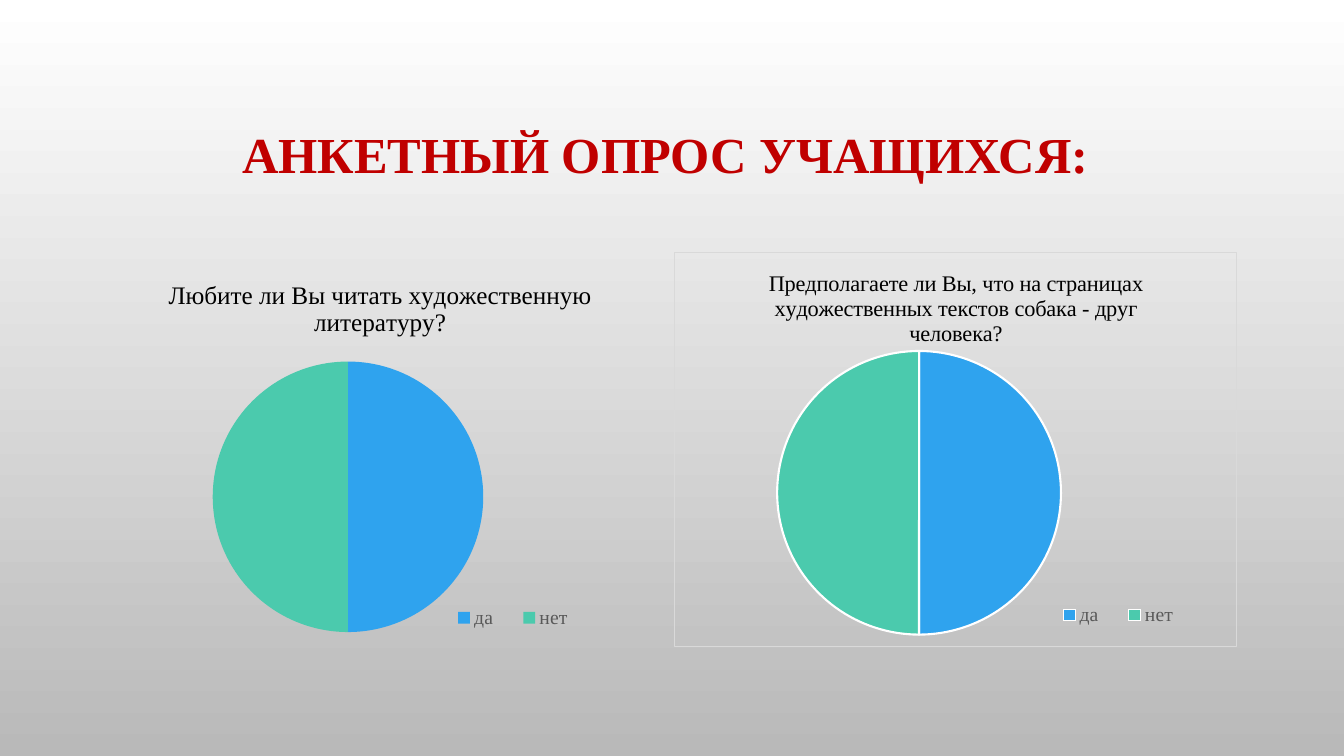
from dataclasses import dataclass

from lxml import etree
from pptx import Presentation
from pptx import util as u
from pptx.chart.chart import Chart
from pptx.chart.data import CategoryChartData
from pptx.dml.color import RGBColor
from pptx.enum import chart as kinds
from pptx.enum import text
from pptx.oxml import parse_xml
from pptx.oxml.ns import nsdecls, qn

Box = tuple[float, ...]
FONT = "Times New Roman"
HUES = {
    "title": "C00000",
    "ink": "000000",
    "legend": "595959",
    "yes": "2FA3EE",
    "no": "4BCAAD",
    "edge": "FFFFFF",
    "frame": "D9D9D9",
    "top": "FFFFFF",
    "base": "B9B9B9",
}


@dataclass
class Pie:
    ask: str
    size: float
    box: Box
    head: Box
    plot: Box
    key: Box
    edge: float = 0
    frame: bool = False


PIES = [
    Pie(
        "Любите ли Вы читать художественную литературу?",
        18,
        (78.5, 185, 386.6, 278.6),
        (0.1, 0.04),
        (0.19, 0.26, 0.5, 0.7),
        (0.6, 0.88, 0.29, 0.08),
    ),
    Pie(
        "Предполагаете ли Вы, что на страницах художественных текстов собака - друг человека?",
        16,
        (481.7, 180, 401.8, 282.2),
        (0.16, 0.03),
        (0.18, 0.25, 0.51, 0.72),
        (0.65, 0.88, 0.28, 0.08),
        1.5,
        True,
    ),
]


def hue(name: str) -> RGBColor:
    return RGBColor.from_string(HUES[name])


def place(node: etree._Element, box: Box, after: str = "", inner: bool = False) -> None:
    for old in node.findall(qn("c:layout")):
        node.remove(old)
    names = "xywh"[:len(box)]
    target = '<c:layoutTarget val="inner"/>' if inner else ""
    modes = "".join(f'<c:{n}Mode val="edge"/>' for n in "xy")
    sizes = "".join(f'<c:{n} val="{v}"/>' for n, v in zip(names, box))
    layout = parse_xml(
        f'<c:layout {nsdecls("c")}><c:manualLayout>{target}{modes}{sizes}'
        "</c:manualLayout></c:layout>"
    )
    if after:
        node.find(qn(after)).addnext(layout)
    else:
        node.insert(0, layout)


def frame(chart: Chart, shown: bool) -> None:
    fill = f'<a:solidFill><a:srgbClr val="{HUES["frame"]}"/></a:solidFill>'
    line = fill if shown else "<a:noFill/>"
    chart.element.find(qn("c:chart")).addnext(
        parse_xml(
            f'<c:spPr {nsdecls("c", "a")}><a:noFill/>'
            f'<a:ln w="{u.Pt(0.75)}">{line}</a:ln></c:spPr>'
        )
    )


def draw(slide, pie: Pie) -> None:
    data = CategoryChartData()
    data.categories = ["да", "нет"]
    data.add_series("Series 1", (50, 50))
    chart = slide.shapes.add_chart(
        kinds.XL_CHART_TYPE.PIE, *(u.Pt(v) for v in pie.box), data
    ).chart
    chart.font.name = "Calibri"
    chart.font.size = u.Pt(10)
    chart.font.color.rgb = hue("ink")
    frame(chart, pie.frame)

    chart.has_title = True
    run = chart.chart_title.text_frame.paragraphs[0].add_run()
    run.text = pie.ask
    run.font.name = FONT
    run.font.size = u.Pt(pie.size)
    run.font.bold = False
    run.font.color.rgb = hue("ink")
    place(chart.chart_title.element if hasattr(chart.chart_title, "element")
          else chart.element.find(".//" + qn("c:title")), pie.head, "c:tx")

    chart.has_legend = True
    key = chart.legend
    key.position = kinds.XL_LEGEND_POSITION.RIGHT
    key.include_in_layout = False
    key.font.name = FONT
    key.font.size = u.Pt(14)
    key.font.color.rgb = hue("legend")
    place(chart.element.find(".//" + qn("c:legend")), pie.key, "c:legendPos")
    place(chart.element.find(".//" + qn("c:plotArea")), pie.plot, inner=True)

    plot = chart.plots[0]
    plot.vary_by_categories = True
    for i, name in enumerate(("yes", "no")):
        part = plot.series[0].points[i].format
        part.fill.solid()
        part.fill.fore_color.rgb = hue(name)
        if pie.edge:
            part.line.color.rgb = hue("edge")
            part.line.width = u.Pt(pie.edge)
        else:
            part.line.fill.background()


def main() -> None:
    deck = Presentation()
    deck.slide_width, deck.slide_height = u.Pt(960), u.Pt(540)
    slide = deck.slides.add_slide(deck.slide_layouts[5])
    back = slide.background.fill
    back.gradient()
    back.gradient_angle = 270
    for stop, name in zip(back.gradient_stops, ("top", "base")):
        stop.color.rgb = hue(name)

    title = slide.shapes.title
    title.left, title.top = u.Pt(72), u.Pt(49)
    title.width, title.height = u.Pt(816), u.Pt(126)
    title.text_frame.vertical_anchor = text.MSO_ANCHOR.MIDDLE
    para = title.text_frame.paragraphs[0]
    para.alignment = text.PP_ALIGN.CENTER
    para.line_spacing = 0.9
    run = para.add_run()
    run.text = "АНКЕТНЫЙ ОПРОС УЧАЩИХСЯ: "
    run.font.name = FONT
    run.font.size = u.Pt(36)
    run.font.bold = True
    run.font.color.rgb = hue("title")

    for pie in PIES:
        draw(slide, pie)
    deck.save("out.pptx")


if __name__ == "__main__":
    main()
